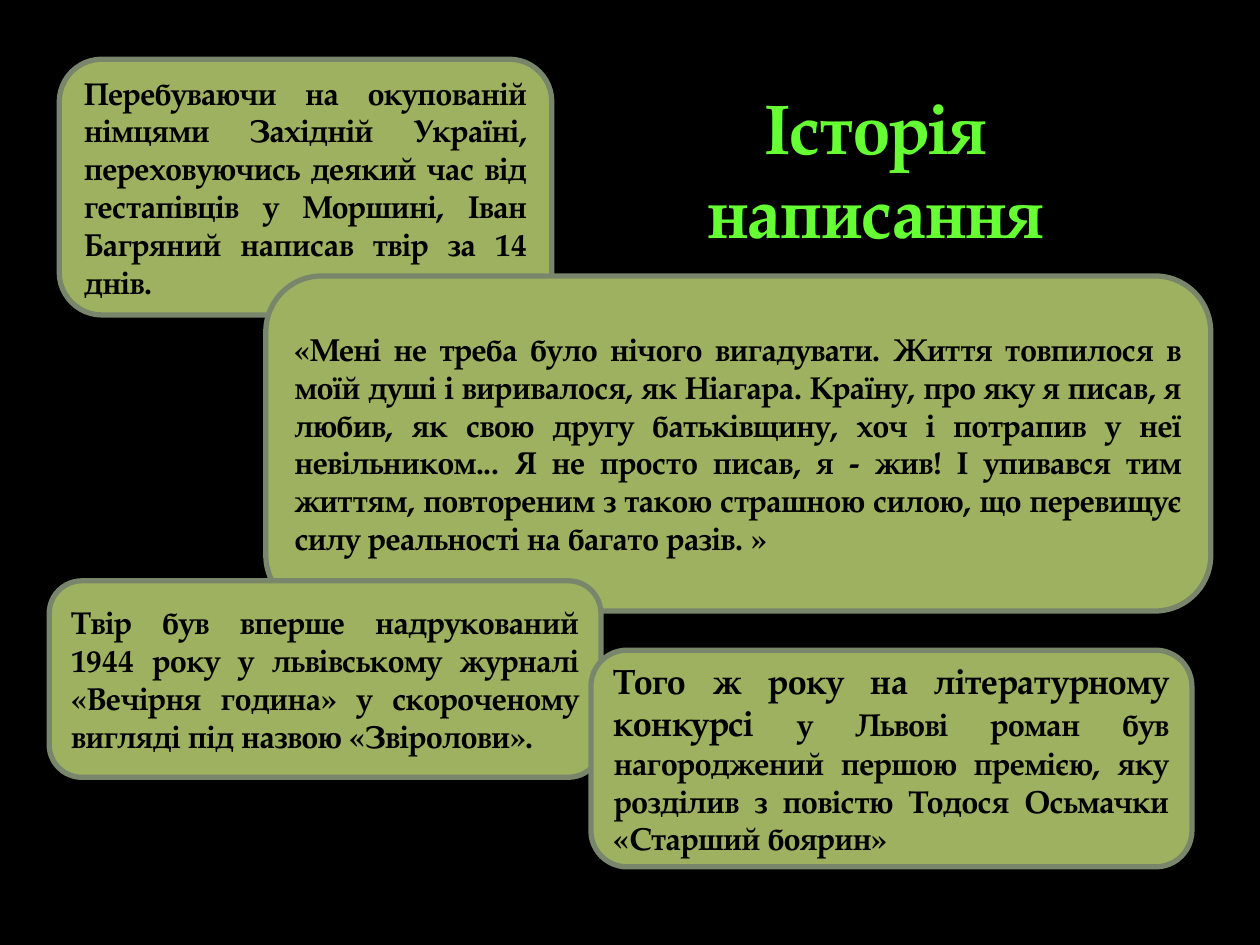
from pptx import Presentation
from pptx import util as u
from pptx.dml.color import RGBColor
from pptx.enum import shapes, text

FONT = "TeX Gyre Pagella"
BLACK, GREEN, OLIVE, BORDER = "000000", "66FF33", "9EB160", "7A866C"

TITLE = ((4.84, 0.62, 4.22, 1.45), [("Історія написання", 40)])

# Cards from back to front: (left, top, width, height), [(text, size)]
CARDS = [
    ((0.47, 0.47, 3.91, 2.03), [
        ("Перебуваючи на окупованій німцями Західній Україні, переховуючись "
         "деякий час від гестапівців у Моршині, Іван Багряний написав твір "
         "за 14 днів.", 18)]),
    ((2.11, 2.19, 7.5, 2.66), [
        ("«Мені не треба було нічого вигадувати. Життя товпилося в моїй душі "
         "і виривалося, як Ніагара. Країну, про яку я писав, я любив, як свою "
         "другу батьківщину, хоч і потрапив у неї невільником... Я не просто "
         "писав, я - жив! І упивався тим життям, повтореним з такою страшною "
         "силою, що перевищує силу реальності на багато разів. »", 18)]),
    ((0.39, 4.61, 4.38, 1.56), [
        ("Твір був вперше надрукований 1944 року у львівському журналі "
         "«Вечірня година» у скороченому вигляді під назвою «Звіролови».", 18)]),
    ((4.69, 5.16, 4.77, 1.72), [
        ("Того ж року на літературному конкурсі ", 20),
        ("у Львові роман був нагороджений першою премією, яку розділив з "
         "повістю Тодося Осьмачки «Старший боярин»", 18)]),
]


def color(value):
    return RGBColor.from_string(value)


def write(shape, spans, align, anchor, ink):
    frame = shape.text_frame
    frame.word_wrap = True
    frame.vertical_anchor = anchor
    para = frame.paragraphs[0]
    para.alignment = align
    for words, size in spans:
        span = para.add_run()
        span.text = words
        span.font.name = FONT
        span.font.size = u.Pt(size)
        span.font.bold = True
        span.font.color.rgb = color(ink)


def add_card(page, place, spans):
    card = page.shapes.add_shape(
        shapes.MSO_SHAPE.ROUNDED_RECTANGLE, *map(u.Inches, place))
    card.shadow.inherit = False
    card.fill.solid()
    card.fill.fore_color.rgb = color(OLIVE)
    card.line.color.rgb = color(BORDER)
    card.line.width = u.Pt(3)
    write(card, spans, text.PP_ALIGN.JUSTIFY, text.MSO_ANCHOR.MIDDLE, BLACK)


def add_title(page, place, spans):
    box = page.shapes.add_textbox(*map(u.Inches, place))
    write(box, spans, text.PP_ALIGN.CENTER, text.MSO_ANCHOR.TOP, GREEN)
    box.text_frame.auto_size = text.MSO_AUTO_SIZE.SHAPE_TO_FIT_TEXT


def main():
    deck = Presentation()
    deck.slide_width, deck.slide_height = u.Inches(10), u.Inches(7.5)
    page = deck.slides.add_slide(deck.slide_layouts[6])

    # Background
    page.background.fill.solid()
    page.background.fill.fore_color.rgb = color(BLACK)

    # Overlapping cards, then the title
    for place, spans in CARDS:
        add_card(page, place, spans)
    add_title(page, *TITLE)

    deck.save("out.pptx")


if __name__ == "__main__":
    main()
